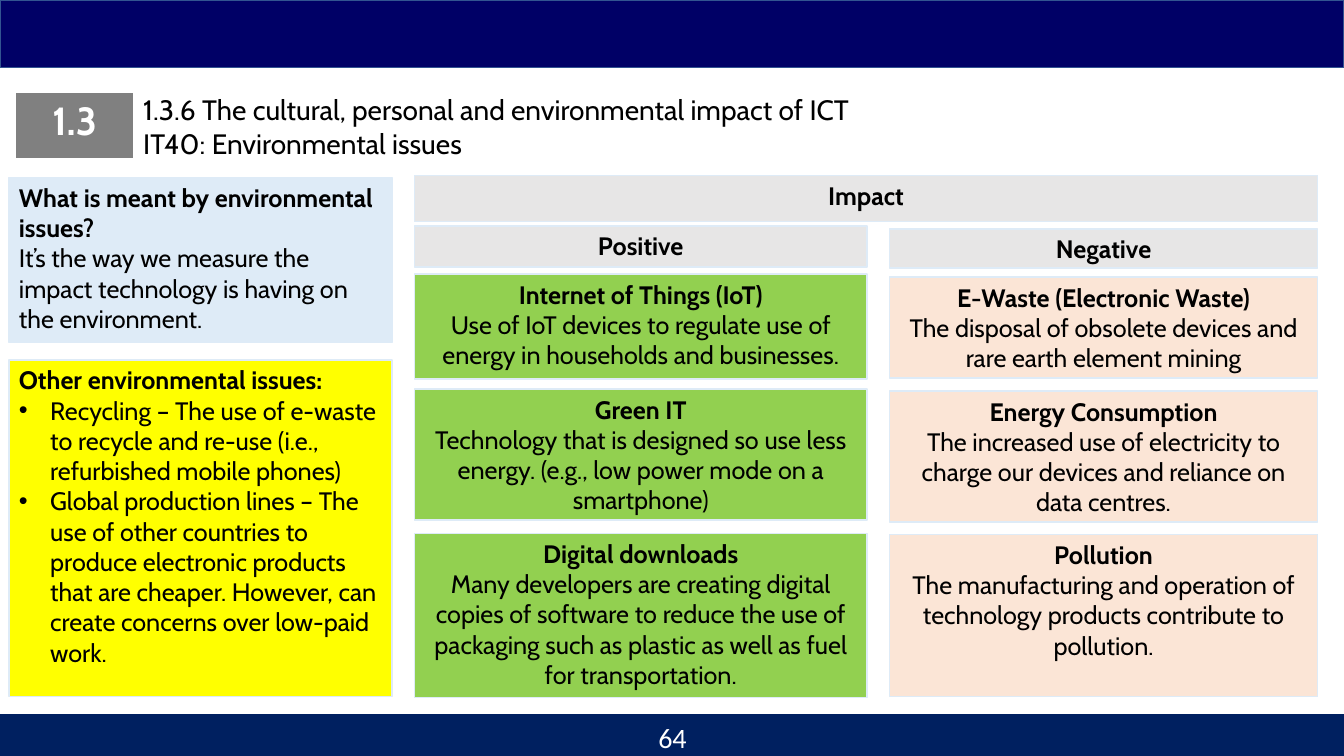
"""Build a slide on the environmental impact of ICT."""
from lxml import etree
from pptx import Presentation
from pptx.dml.color import RGBColor
from pptx.enum.shapes import MSO_SHAPE
from pptx.enum.text import MSO_ANCHOR, MSO_AUTO_SIZE, PP_ALIGN
from pptx.oxml.ns import qn
from pptx.util import Inches, Pt

RECTANGLE = MSO_SHAPE.RECTANGLE
TOP = MSO_ANCHOR.TOP
GROW = MSO_AUTO_SIZE.SHAPE_TO_FIT_TEXT
LEFT, CENTER = PP_ALIGN.LEFT, PP_ALIGN.CENTER

BLACK, WHITE = "000000", "FFFFFF"
NAVY, BANNER, BANNER_LINE = "002060", "000066", "325491"
GRAY, BADGE_GRAY = "E7E6E6", "808080"
PALE_BLUE, YELLOW = "DEEBF7", "FFFF00"
GREEN, PEACH = "92D050", "FBE5D6"

LEFT_COLUMN = (0.09, 3.8)
POSITIVE_COLUMN = (4.11, 4.49)
NEGATIVE_COLUMN = (8.82, 4.25)

POSITIVE_IMPACTS = [
    (2.72, 1.04, "Internet of Things (IoT)",
     "Use of IoT devices to regulate use of energy in households and businesses."),
    (3.86, 1.3, "Green IT",
     "Technology that is designed so use less energy. "
     "(e.g., low power mode on a smartphone)"),
    (5.29, 1.63, "Digital downloads",
     "Many developers are creating digital copies of software to reduce the use of "
     "packaging such as plastic as well as fuel for transportation."),
]
NEGATIVE_IMPACTS = [
    (2.75, 1, "E-Waste (Electronic Waste)",
     "The disposal of obsolete devices and rare earth element mining"),
    (3.88, 1.3, "Energy Consumption",
     "The increased use of electricity to charge our devices "
     "and reliance on data centres."),
    (5.3, 1.61, "Pollution",
     "The manufacturing and operation of technology products "
     "contribute to pollution."),
]
OTHER_ISSUES = [
    "Recycling – The use of e-waste to recycle and re-use "
    "(i.e., refurbished mobile phones)",
    "Global production lines – The use of other countries to produce electronic "
    "products that are cheaper. However, can create concerns over low-paid work.",
]


def color(value):
    """Return the colour for a hex string."""
    return RGBColor.from_string(value)


def format_paragraph(paragraph, size, font_color, bold=False, align=LEFT, font="Cabin"):
    """Align a paragraph and format its runs."""
    paragraph.alignment = align
    for run in paragraph.runs:
        run.font.name = font
        run.font.size = Pt(size)
        run.font.bold = bold
        run.font.color.rgb = color(font_color)


def add_bullet(paragraph):
    """Give a paragraph a round bullet with a hanging indent."""
    properties = paragraph._p.get_or_add_pPr()
    properties.set("marL", str(Inches(0.31)))
    properties.set("indent", str(-Inches(0.31)))
    font = etree.SubElement(properties, qn("a:buFont"))
    font.set("typeface", "Arial")
    etree.SubElement(properties, qn("a:buChar")).set("char", "•")


def add_box(slide, column, top, height, fill, line=PALE_BLUE):
    """Add a filled rectangle within a column."""
    left, width = column
    box = slide.shapes.add_shape(
        RECTANGLE, Inches(left), Inches(top), Inches(width), Inches(height))
    box.shadow.inherit = False
    box.fill.solid()
    box.fill.fore_color.rgb = color(fill)
    box.line.color.rgb = color(line)
    box.line.width = Pt(1)
    return box


def add_panel(slide, column, top, height, fill, heading, body=(), align=CENTER,
              bulleted=False):
    """Add a box with a bold heading and plain body paragraphs."""
    frame = add_box(slide, column, top, height, fill).text_frame
    frame.word_wrap = True
    frame.vertical_anchor = TOP
    frame.text = "\n".join([heading, *body])
    for index, paragraph in enumerate(frame.paragraphs):
        format_paragraph(paragraph, 18, BLACK, bold=index == 0, align=align)
        if bulleted and index > 0:
            add_bullet(paragraph)


def set_borders(cell, border_color, bottom_width):
    """Draw the four borders of a table cell."""
    properties = cell._tc.get_or_add_tcPr()
    widths = {"a:lnL": 1, "a:lnR": 1, "a:lnT": 1, "a:lnB": bottom_width}
    for index, (tag, width) in enumerate(widths.items()):
        border = etree.Element(qn(tag), w=str(Pt(width)))
        fill = etree.SubElement(border, qn("a:solidFill"))
        etree.SubElement(fill, qn("a:srgbClr")).set("val", border_color)
        properties.insert(index, border)


def add_row_table(slide, left, top, width, height, columns, fill, border, bottom_width=1):
    """Add a one-row table with filled cells and return it."""
    table = slide.shapes.add_table(
        1, columns, Inches(left), Inches(top), Inches(width), Inches(height)).table
    for cell in table.iter_cells():
        cell.fill.solid()
        cell.fill.fore_color.rgb = color(fill)
        set_borders(cell, border, bottom_width)
    return table


def set_title(slide):
    """Place and format the slide title."""
    title = slide.shapes.title
    title.left, title.top = Inches(1.32), Inches(0.87)
    title.width, title.height = Inches(8.5), Inches(0.77)
    frame = title.text_frame
    frame.word_wrap = True
    frame.auto_size = GROW
    frame.vertical_anchor = TOP
    frame.text = ("1.3.6 The cultural, personal and environmental impact of ICT\n"
                  "IT40: Environmental issues")
    for paragraph in frame.paragraphs:
        format_paragraph(paragraph, 20, BLACK)


def add_page_number(slide):
    """Add the page number on the footer band."""
    frame = slide.shapes.add_textbox(
        Inches(5.17), Inches(7.1), Inches(3), Inches(0.4)).text_frame
    frame.word_wrap = True
    frame.text = "64"
    format_paragraph(frame.paragraphs[0], 20, WHITE, align=CENTER, font="Calibri")


def main():
    """Build and save the presentation."""
    presentation = Presentation()
    presentation.slide_width, presentation.slide_height = Inches(13.33), Inches(7.5)
    slide = presentation.slides.add_slide(presentation.slide_layouts[5])

    add_row_table(slide, 0, 7.09, 13.33, 0.41, 3, NAVY, NAVY)
    add_box(slide, (0, 13.33), 0, 0.67, BANNER, BANNER_LINE)
    set_title(slide)
    badge = add_row_table(slide, 0.15, 0.92, 1.18, 0.67, 1, BADGE_GRAY, WHITE, 3).cell(0, 0)
    badge.text_frame.text = "1.3"
    format_paragraph(badge.text_frame.paragraphs[0], 28, WHITE, bold=True, align=CENTER)

    add_panel(slide, (4.11, 8.96), 1.74, 0.46, GRAY, "Impact")
    add_panel(slide, POSITIVE_COLUMN, 2.24, 0.41, GRAY, "Positive")
    add_panel(slide, NEGATIVE_COLUMN, 2.27, 0.39, GRAY, "Negative")
    for column, fill, impacts in ((POSITIVE_COLUMN, GREEN, POSITIVE_IMPACTS),
                                  (NEGATIVE_COLUMN, PEACH, NEGATIVE_IMPACTS)):
        for top, height, heading, body in impacts:
            add_panel(slide, column, top, height, fill, heading, [body])

    add_panel(slide, LEFT_COLUMN, 1.76, 1.64, PALE_BLUE,
              "What is meant by environmental issues?",
              ["It’s the way we measure the impact technology is having "
               "on the environment."], align=LEFT)
    add_panel(slide, LEFT_COLUMN, 3.57, 3.34, YELLOW, "Other environmental issues:",
              OTHER_ISSUES, align=LEFT, bulleted=True)
    add_page_number(slide)
    presentation.save("out.pptx")


if __name__ == "__main__":
    main()
